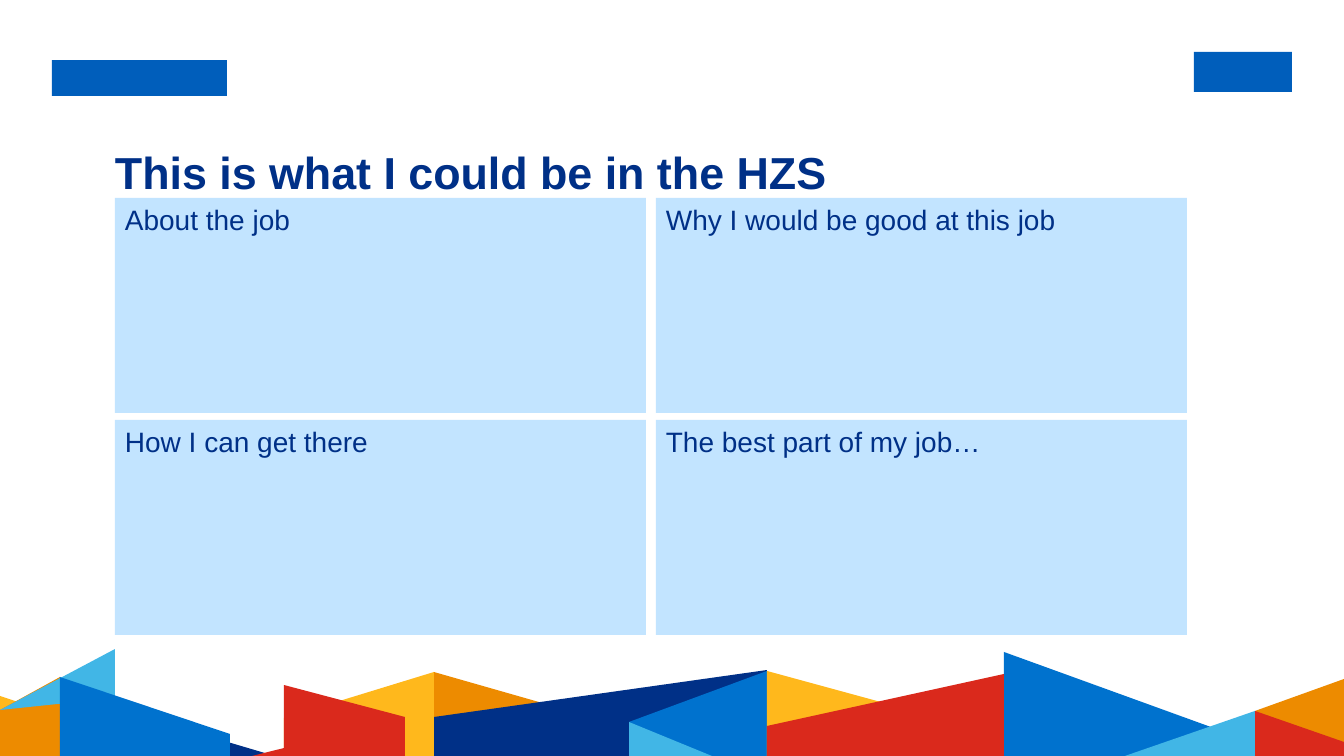
import pptx
import pptx.util
import pptx.dml.color
import pptx.enum.shapes
import pptx.enum.text

HEADING = "This is what I could be in the HZS"
PROMPTS = [
    ["About the job", "Why I would be good at this job"],
    ["How I can get there", "The best part of my job…"],
]

THEME = {
    "font": "Arial",
    "heading_size": 32,
    "prompt_size": 20,
    "navy": "003087",
    "blue": "0072CE",
    "sky": "41B6E6",
    "red": "DA291C",
    "orange": "ED8B00",
    "yellow": "FFB81C",
    "panel": "C2E4FF",
    "badge": "005EBB",
}

SLIDE_W, SLIDE_H = 1344, 756
EMU_PER_PX = 914400 / 100.8

BADGES = [(52, 60, 175, 36), (1194, 52, 98, 40)]
HEADING_BOX = (115, 145, 1103, 60)
PANEL_LEFT, PANEL_TOP = 115, 198
PANEL_W, PANEL_H = 531, 215
GAP_X, GAP_Y = 10, 7

SKYLINE = [
    ("orange", [(434, 756), (434, 672), (539, 702), (539, 727)]),
    ("navy", [(434, 756), (434, 717), (767, 670), (767, 756)]),
    ("orange", [(1255, 756), (1255, 711), (1344, 679), (1344, 756)]),
    ("yellow", [(0, 756), (0, 696), (96, 728), (96, 756)]),
    ("yellow", [(284, 756), (284, 718), (434, 672), (434, 756)]),
    ("orange", [(0, 756), (0, 710), (60, 677), (60, 756)]),
    ("red", [(284, 756), (284, 685), (405, 717), (405, 756)]),
    ("navy", [(177, 756), (177, 727), (275, 756)]),
    ("red", [(252, 756), (405, 718), (405, 756)]),
    ("sky", [(0, 710), (115, 649), (115, 698)]),
    ("blue", [(60, 756), (60, 677), (230, 734), (230, 756)]),
    ("blue", [(629, 756), (629, 722), (767, 671), (767, 756)]),
    ("sky", [(629, 756), (629, 722), (712, 756)]),
    ("blue", [(1004, 756), (1004, 652), (1255, 743), (1255, 756)]),
    ("red", [(1255, 756), (1255, 711), (1344, 742), (1344, 756)]),
    ("sky", [(1125, 756), (1255, 711), (1255, 756)]),
    ("yellow", [(767, 756), (767, 671), (899, 707), (899, 756)]),
    ("red", [(767, 756), (767, 726), (1004, 674), (1004, 756)]),
]


def emu(px):
    return round(px * EMU_PER_PX)


def color(name):
    return pptx.dml.color.RGBColor.from_string(THEME[name])


def paint(shape, fill):
    shape.shadow.inherit = False
    shape.fill.solid()
    shape.fill.fore_color.rgb = color(fill)
    shape.line.fill.background()


def add_block(slide, box, fill):
    block = slide.shapes.add_shape(
        pptx.enum.shapes.MSO_SHAPE.RECTANGLE, *map(emu, box))
    paint(block, fill)
    return block


def write(frame, words, size, anchor, bold=False):
    frame.word_wrap = True
    frame.vertical_anchor = anchor
    frame.text = words
    paragraph = frame.paragraphs[0]
    paragraph.alignment = pptx.enum.text.PP_ALIGN.LEFT
    font = paragraph.runs[0].font
    font.name = THEME["font"]
    font.size = pptx.util.Pt(THEME[size])
    font.bold = bold
    font.color.rgb = color("navy")


def main():
    deck = pptx.Presentation()
    deck.slide_width, deck.slide_height = emu(SLIDE_W), emu(SLIDE_H)
    slide = deck.slides.add_slide(deck.slide_layouts[6])

    for badge in BADGES:
        add_block(slide, badge, "badge")

    for fill, corners in SKYLINE:
        outline = slide.shapes.build_freeform(*corners[0], scale=EMU_PER_PX)
        outline.add_line_segments(corners[1:], close=True)
        paint(outline.convert_to_shape(), fill)

    heading = slide.shapes.add_textbox(*map(emu, HEADING_BOX)).text_frame
    heading.margin_left = heading.margin_right = 0
    heading.margin_top = heading.margin_bottom = 0
    write(heading, HEADING, "heading_size",
          pptx.enum.text.MSO_ANCHOR.MIDDLE, bold=True)
    heading.paragraphs[0].line_spacing = 0.9

    for row, prompts in enumerate(PROMPTS):
        for column, prompt in enumerate(prompts):
            left = PANEL_LEFT + column * (PANEL_W + GAP_X)
            top = PANEL_TOP + row * (PANEL_H + GAP_Y)
            panel = add_block(slide, (left, top, PANEL_W, PANEL_H), "panel")
            write(panel.text_frame, prompt, "prompt_size",
                  pptx.enum.text.MSO_ANCHOR.TOP)

    deck.save("out.pptx")


if __name__ == "__main__":
    main()
